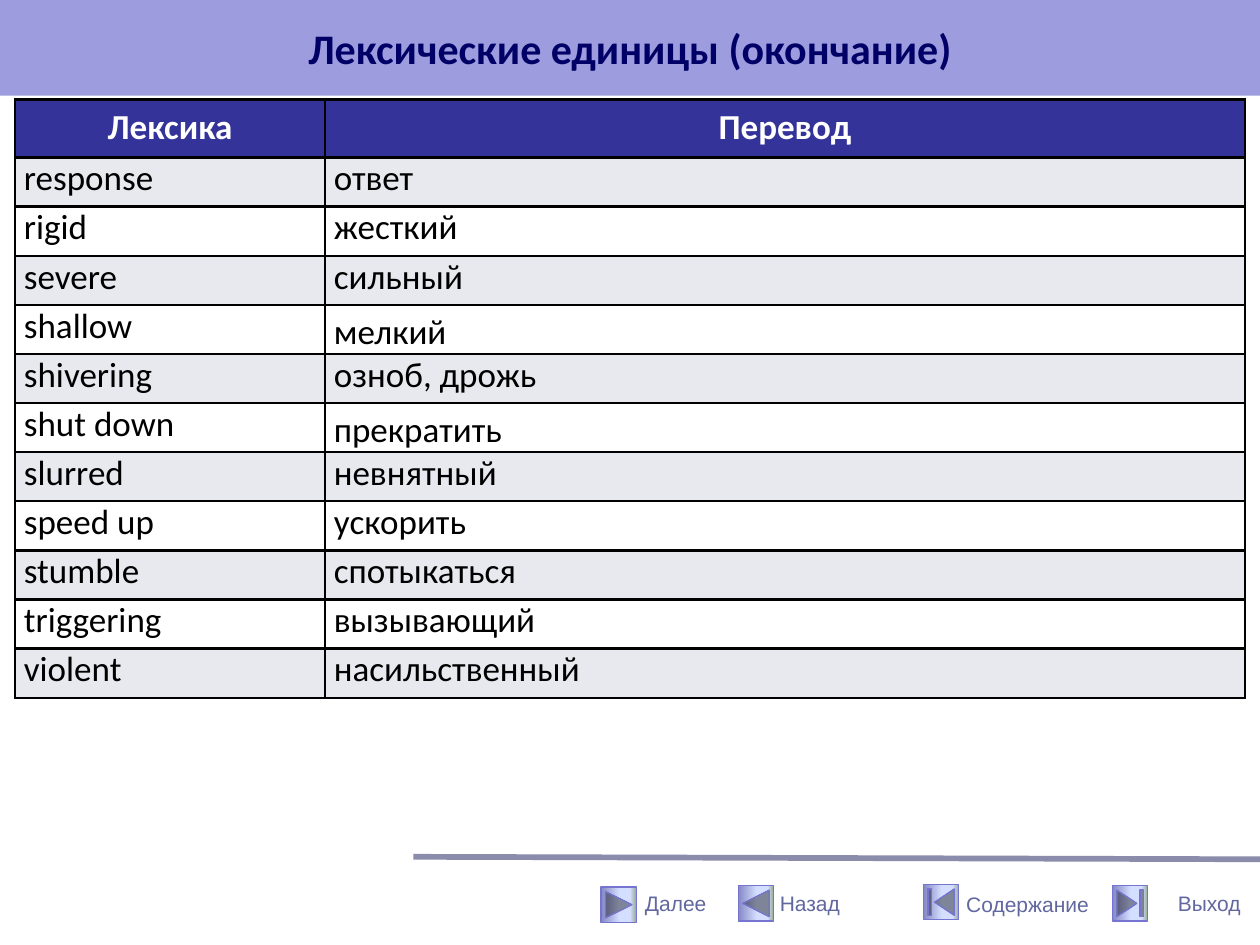
"""Build a vocabulary slide with a two-column table and a navigation bar."""
from dataclasses import dataclass

from pptx import Presentation
from pptx.dml.color import RGBColor
from pptx.enum.shapes import MSO_CONNECTOR, MSO_SHAPE
from pptx.enum.text import MSO_ANCHOR, PP_ALIGN
from pptx.oxml import parse_xml
from pptx.oxml.ns import nsdecls, qn
from pptx.oxml.xmlchemy import OxmlElement
from pptx.util import Emu, Inches, Pt

CENTER, LEFT, JUSTIFY = PP_ALIGN.CENTER, PP_ALIGN.LEFT, PP_ALIGN.JUSTIFY
TOP, MIDDLE = MSO_ANCHOR.TOP, MSO_ANCHOR.MIDDLE
STRAIGHT = MSO_CONNECTOR.STRAIGHT
NEXT = MSO_SHAPE.ACTION_BUTTON_FORWARD_OR_NEXT
BACK = MSO_SHAPE.ACTION_BUTTON_BACK_OR_PREVIOUS
FIRST = MSO_SHAPE.ACTION_BUTTON_BEGINNING
LAST = MSO_SHAPE.ACTION_BUTTON_END


@dataclass(frozen=True)
class Theme:
    """Colours, fonts and type sizes of the slide."""
    font: str = "Calibri"
    nav_font: str = "Arial"
    title: str = "000066"
    title_band: str = "9C9CDF"
    header: str = "333399"
    stripe: str = "E8E8EF"
    white: str = "FFFFFF"
    black: str = "000000"
    nav_text: str = "61679F"
    nav_line: str = "7575D1"
    rule: str = "5A5A88"
    button: tuple = ((0, "8488C4"), (53, "D4DEFF"), (83, "D4DEFF"), (100, "96AB94"))
    title_size: int = 24
    table_size: int = 20
    nav_size: int = 12


@dataclass(frozen=True)
class Entry:
    """A word, its translation, and whether the translation hangs."""
    word: str
    translation: str
    hanging: bool = False


@dataclass(frozen=True)
class NavItem:
    """A navigation button with its label box."""
    shape: int
    left: float
    top: float
    label: str
    box: tuple
    anchor: int = TOP
    wrap: bool = False


THEME = Theme()
ENTRIES = (
    Entry("response", "ответ"),
    Entry("rigid", "жесткий"),
    Entry("severe", "сильный"),
    Entry("shallow", "мелкий", True),
    Entry("shivering", "озноб, дрожь"),
    Entry("shut down", "прекратить", True),
    Entry("slurred", "невнятный"),
    Entry("speed up", "ускорить"),
    Entry("stumble", "спотыкаться"),
    Entry("triggering", "вызывающий"),
    Entry("violent", "насильственный"),
)
NAV = (
    NavItem(LAST, 8.83, 7.03, "Выход", (9.25, 6.92, 0.75, 0.5), MIDDLE),
    NavItem(FIRST, 7.33, 7.02, "Содержание", (7.57, 7.03, 1.18, 0.3), wrap=True),
    NavItem(NEXT, 4.77, 7.04, "Далее", (5.02, 7.02, 0.69, 0.3)),
    NavItem(BACK, 5.86, 7.03, "Назад", (6.09, 7.02, 0.68, 0.3)),
)


def rgb(value: str) -> RGBColor:
    """Return a colour from its hex value."""
    return RGBColor.from_string(value)


def add_run(p, text: str, size: int, font: str, color: str, bold: bool = False) -> None:
    """Add one formatted run to a paragraph."""
    r = p.add_run()
    r.text = text
    r.font.size, r.font.name, r.font.bold = Pt(size), font, bold
    r.font.color.rgb = rgb(color)


def add_title(s, text: str) -> None:
    """Turn the title placeholder into the top band."""
    sp = s.shapes.title
    sp.left, sp.top, sp.width, sp.height = Emu(0), Emu(0), Inches(10), Inches(0.76)
    sp.fill.solid()
    sp.fill.fore_color.rgb = rgb(THEME.title_band)
    tf = sp.text_frame
    tf.vertical_anchor = MIDDLE
    p = tf.paragraphs[0]
    p.alignment = CENTER
    add_run(p, text, THEME.title_size, THEME.font, THEME.title, True)


def add_borders(cell) -> None:
    """Outline a cell on all four sides."""
    tc_pr = cell._tc.get_or_add_tcPr()
    for i, side in enumerate(("lnL", "lnR", "lnT", "lnB")):
        tc_pr.insert(i, parse_xml(
            f'<a:{side} {nsdecls("a")} w="{Pt(1.5)}"><a:solidFill>'
            f'<a:srgbClr val="{THEME.black}"/></a:solidFill></a:{side}>'))


def fill_cell(cell, text: str, fill: str, header: bool = False, hanging: bool = False) -> None:
    """Write and format one table cell."""
    side, edge = (0.1, 0.05) if header else (0.07, 0)
    cell.margin_left = cell.margin_right = Inches(side)
    cell.margin_top = cell.margin_bottom = Inches(edge)
    cell.fill.solid()
    cell.fill.fore_color.rgb = rgb(fill)
    add_borders(cell)
    p = cell.text_frame.paragraphs[0]
    p.alignment = CENTER if header else JUSTIFY if hanging else LEFT
    if hanging:
        p.line_spacing = 1.15
        p_pr = p._p.get_or_add_pPr()
        p_pr.set("marL", str(Inches(0.5)))
        p_pr.set("indent", str(Inches(-0.5)))
    color = THEME.white if header else THEME.black
    add_run(p, text, THEME.table_size, THEME.font, color, header)


def add_vocabulary(s, entries: tuple) -> None:
    """Add the striped vocabulary table."""
    table = s.shapes.add_table(len(entries) + 1, 2, Inches(0.12), Inches(0.79),
                               Inches(9.76), Inches(4.75)).table
    table.columns[0].width, table.columns[1].width = Inches(2.46), Inches(7.3)
    for row in table.rows:
        row.height = Inches(0.39)
    table.rows[0].height = Inches(0.46)
    for col, text in enumerate(("Лексика", "Перевод")):
        fill_cell(table.cell(0, col), text, THEME.header, header=True)
    for row, entry in enumerate(entries, 1):
        fill = THEME.stripe if row % 2 else THEME.white
        fill_cell(table.cell(row, 0), entry.word, fill)
        fill_cell(table.cell(row, 1), entry.translation, fill, hanging=entry.hanging)


def add_rule(s) -> None:
    """Add the translucent line above the navigation bar."""
    line = s.shapes.add_connector(STRAIGHT, Inches(3.28), Inches(6.8), Inches(10), Inches(6.82))
    line.line.color.rgb = rgb(THEME.rule)
    line.line.width = Pt(3.25)
    alpha = OxmlElement("a:alpha")
    alpha.set("val", "70000")
    sp_pr = line._element.spPr
    sp_pr.find(".//" + qn("a:srgbClr")).append(alpha)
    sp_pr.append(OxmlElement("a:effectLst"))


def add_nav_item(s, item: NavItem) -> None:
    """Add a gradient button and its label."""
    sp = s.shapes.add_shape(item.shape, Inches(item.left), Inches(item.top),
                            Inches(0.28), Inches(0.28))
    sp.shadow.inherit = False
    sp.line.color.rgb = rgb(THEME.nav_line)
    sp.line.width = Pt(0.75)
    sp.fill.gradient()
    sp.fill.gradient_angle = 0
    stops = "".join(f'<a:gs pos="{pos * 1000}"><a:srgbClr val="{color}"/></a:gs>'
                    for pos, color in THEME.button)
    old = sp._element.spPr.find(".//" + qn("a:gsLst"))
    old.getparent().replace(old, parse_xml(f'<a:gsLst {nsdecls("a")}>{stops}</a:gsLst>'))
    tf = s.shapes.add_textbox(*map(Inches, item.box)).text_frame
    tf.word_wrap, tf.vertical_anchor = item.wrap, item.anchor
    add_run(tf.paragraphs[0], item.label, THEME.nav_size, THEME.nav_font, THEME.nav_text)


def main() -> None:
    """Build and save the slide."""
    prs = Presentation()
    prs.slide_width, prs.slide_height = Inches(10), Inches(7.5)
    s = prs.slides.add_slide(prs.slide_layouts[5])
    add_rule(s)
    for item in NAV:
        add_nav_item(s, item)
    add_title(s, "Лексические единицы (окончание)")
    add_vocabulary(s, ENTRIES)
    prs.save("out.pptx")


if __name__ == "__main__":
    main()
